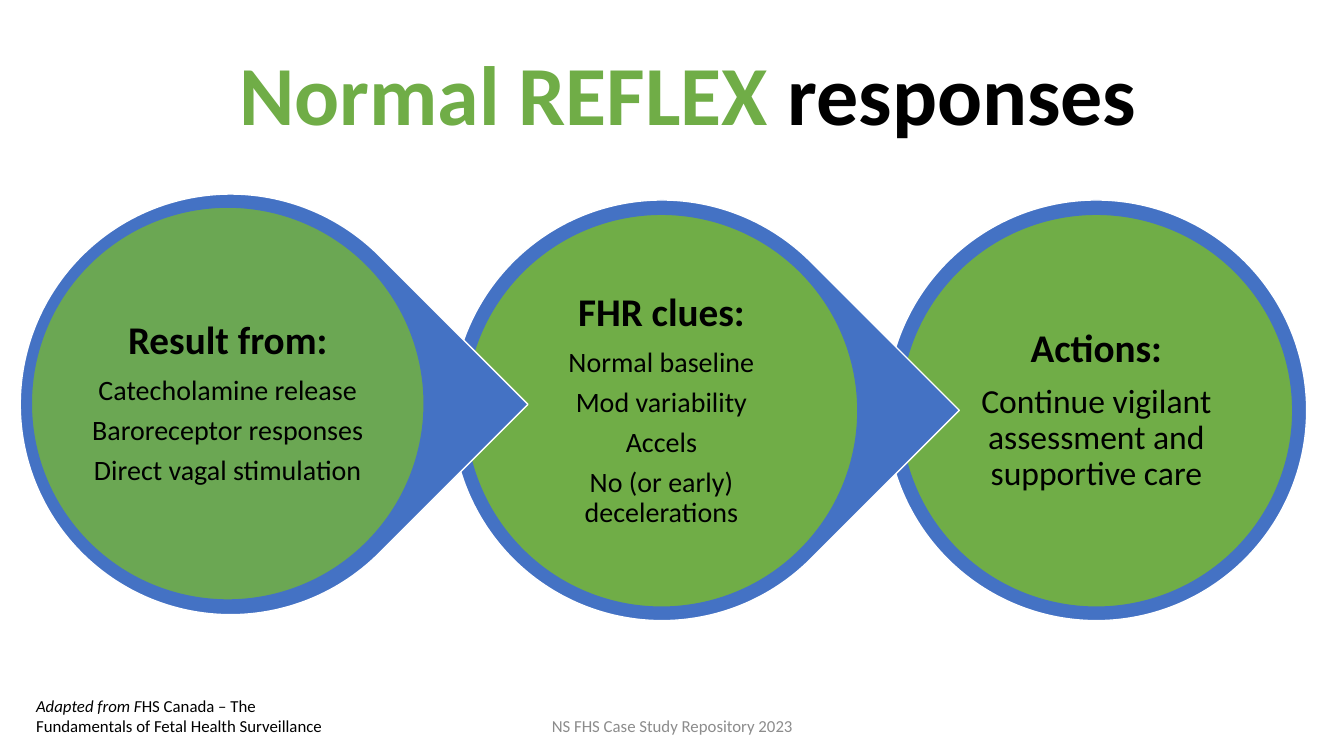
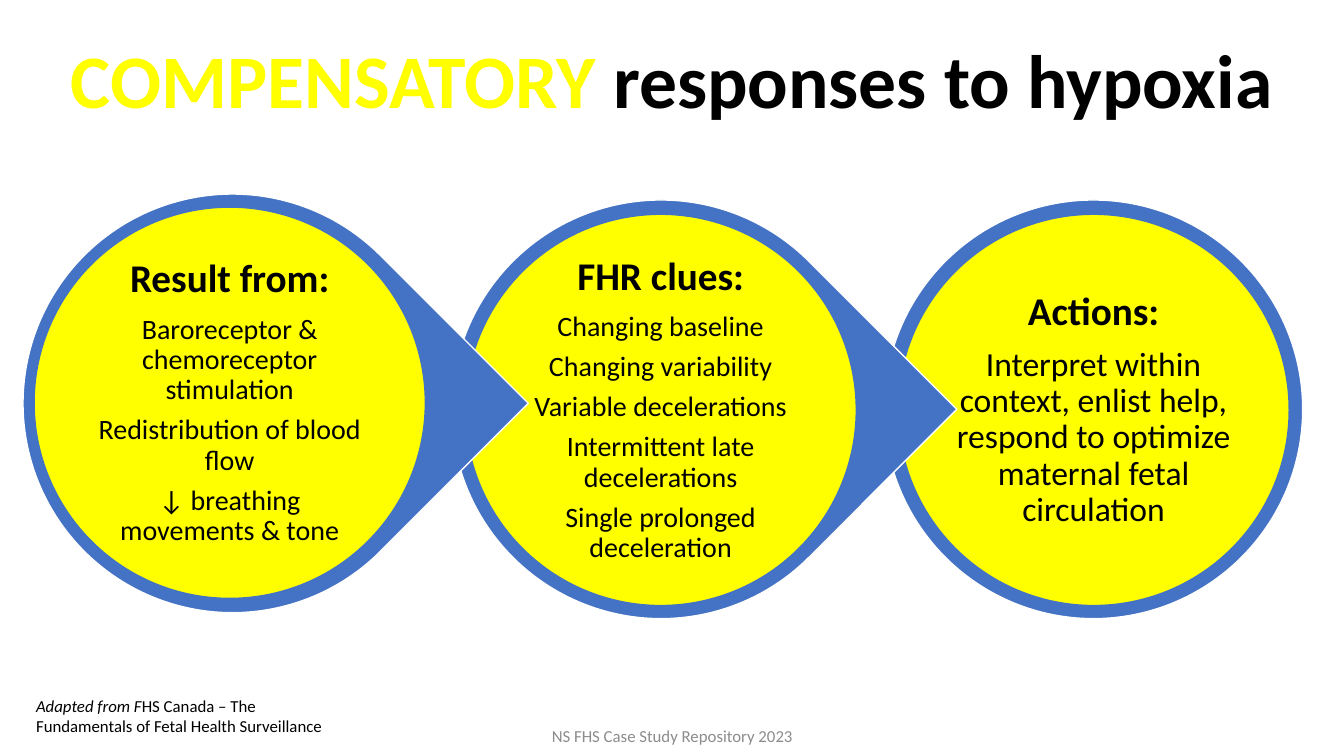
from dataclasses import dataclass

from lxml import etree
from pptx import Presentation
from pptx.dml.color import RGBColor
from pptx.enum.shapes import MSO_SHAPE
from pptx.enum.text import MSO_ANCHOR, PP_ALIGN
from pptx.oxml.ns import qn
from pptx.util import Cm, Pt

# Shared style
FONT = "Calibri"
BLACK = RGBColor(0x00, 0x00, 0x00)
WHITE = RGBColor(0xFF, 0xFF, 0xFF)
GREY = RGBColor(0x8C, 0x8C, 0x8C)
BLUE = RGBColor(0x44, 0x72, 0xC4)
GREEN = RGBColor(0x70, 0xAD, 0x47)
YELLOW = RGBColor(0xFF, 0xFF, 0x00)
ELLIPSE = MSO_SHAPE.OVAL
TEARDROP = MSO_SHAPE.TEAR
CENTER = PP_ALIGN.CENTER
LEFT = PP_ALIGN.LEFT
TOP = MSO_ANCHOR.TOP
MIDDLE = MSO_ANCHOR.MIDDLE
HEADING_SIZE = 28
LINE_SPACING = 0.9
SPACE_AFTER = 0.35  # share of the text size


@dataclass
class Run:
    text: str
    size: float
    color: RGBColor = BLACK
    bold: bool = False
    italic: bool = False


@dataclass
class Stage:
    """A disc in the chain; the face is offset from its ring (cm)."""
    heading: str
    ring: MSO_SHAPE
    top: float
    face_dx: float
    face_dy: float
    size: float


@dataclass
class Response:
    title: list[Run]
    title_box: tuple[float, float, float, float]
    color: RGBColor
    ring_size: float
    face_size: float
    lefts: tuple[float, float, float]
    lines: tuple[list[str], list[str], list[str]]
    footer_top: float
    first_alpha: int = 100


STAGES = [
    Stage("Result from:", TEARDROP, 4.89, 0.28, 0.33, 20),
    Stage("FHR clues:", TEARDROP, 5.04, 0.34, 0.36, 20),
    Stage("Actions:", ELLIPSE, 5.04, 0.35, 0.36, 24),
]

RESPONSES = [
    Response(
        title=[Run("Normal REFLEX ", 60, GREEN, bold=True),
               Run("responses", 60, bold=True)],
        title_box=(2.74, 1.22, 29.2, 3.68),
        color=GREEN,
        ring_size=10.6,
        face_size=9.9,
        lefts=(0.51, 11.38, 22.33),
        lines=(
            ["Catecholamine release", "Baroreceptor responses",
             "Direct vagal stimulation"],
            ["Normal baseline", "Mod variability", "Accels",
             "No (or early) decelerations"],
            ["Continue vigilant assessment and supportive care"],
        ),
        footer_top=17.78,
        first_alpha=90,
    ),
    Response(
        title=[Run("COMPENSATORY", 54, YELLOW, bold=True),
               Run(" responses to hypoxia", 54, bold=True)],
        title_box=(0.3, 0.97, 33.27, 3.68),
        color=YELLOW,
        ring_size=10.55,
        face_size=9.86,
        lefts=(0.58, 11.38, 22.28),
        lines=(
            ["Baroreceptor & chemoreceptor stimulation",
             "Redistribution of blood flow",
             "↓ breathing movements & tone"],
            ["Changing baseline", "Changing variability",
             "Variable decelerations", "Intermittent late decelerations",
             "Single prolonged deceleration"],
            ["Interpret within context, enlist help, respond to optimize "
             "maternal fetal circulation"],
        ),
        footer_top=18.03,
    ),
]


def add_runs(p, runs: list[Run]) -> None:
    for run in runs:
        r = p.add_run()
        r.text = run.text
        r.font.name = FONT
        r.font.size = Pt(run.size)
        r.font.bold = run.bold
        r.font.italic = run.italic
        r.font.color.rgb = run.color


def add_text(s, box: tuple[float, float, float, float], runs: list[Run],
             align=CENTER, anchor=TOP, spacing: float = 1.0) -> None:
    tf = s.shapes.add_textbox(*(Cm(v) for v in box)).text_frame
    tf.word_wrap = True
    tf.vertical_anchor = anchor
    p = tf.paragraphs[0]
    p.alignment = align
    p.line_spacing = spacing
    add_runs(p, runs)


def add_disc(s, kind, left: float, top: float, size: float,
             fill: RGBColor, line: RGBColor):
    sp = s.shapes.add_shape(kind, Cm(left), Cm(top), Cm(size), Cm(size))
    sp.shadow.inherit = False
    sp.fill.solid()
    sp.fill.fore_color.rgb = fill
    sp.line.color.rgb = line
    sp.line.width = Pt(1)
    return sp


def set_alpha(sp, percent: int) -> None:
    color = sp.fill._xPr.find(qn("a:solidFill"))[0]
    etree.SubElement(color, qn("a:alpha"), val=str(percent * 1000))


def add_stage(s, stage: Stage, response: Response, left: float,
              lines: list[str], alpha: int) -> None:
    # Ring, with its point turned to the right
    ring = add_disc(s, stage.ring, left, stage.top, response.ring_size,
                    BLUE, WHITE)
    if stage.ring == TEARDROP:
        ring.rotation = 45

    # Face with heading and lines
    face = add_disc(s, ELLIPSE, left + stage.face_dx,
                    stage.top + stage.face_dy, response.face_size,
                    response.color, BLUE)
    if alpha < 100:
        set_alpha(face, alpha)
    tf = face.text_frame
    tf.word_wrap = True
    tf.vertical_anchor = MIDDLE
    tf.margin_left = tf.margin_right = Cm(0)
    tf.margin_top = tf.margin_bottom = Cm(0.1)
    runs = [Run(stage.heading, HEADING_SIZE, bold=True)]
    runs += [Run(text, stage.size) for text in lines]
    for i, run in enumerate(runs):
        p = tf.add_paragraph() if i else tf.paragraphs[0]
        p.alignment = CENTER
        p.line_spacing = LINE_SPACING
        p.space_after = Pt(run.size * SPACE_AFTER)
        add_runs(p, [run])


def add_footers(s, top: float) -> None:
    add_text(s, (11.23, top, 11.43, 1.02),
             [Run("NS FHS Case Study Repository 2023", 12, GREY)],
             anchor=MIDDLE)
    add_text(s, (0.66, 17.4, 8.1, 1.27),
             [Run("Adapted from F", 12, italic=True),
              Run("HS Canada – The Fundamentals of Fetal Health "
                  "Surveillance", 12)], align=LEFT)


def add_response(prs, response: Response) -> None:
    s = prs.slides.add_slide(prs.slide_layouts[6])
    # Right to left, so that each point overlaps the next disc
    for i in reversed(range(len(STAGES))):
        add_stage(s, STAGES[i], response, response.lefts[i],
                  response.lines[i], response.first_alpha if i == 0 else 100)
    add_text(s, response.title_box, response.title, spacing=LINE_SPACING)
    add_footers(s, response.footer_top)


def main() -> None:
    prs = Presentation()
    prs.slide_width, prs.slide_height = Cm(33.87), Cm(19.05)
    for response in RESPONSES:
        add_response(prs, response)
    prs.save("out.pptx")


if __name__ == "__main__":
    main()
